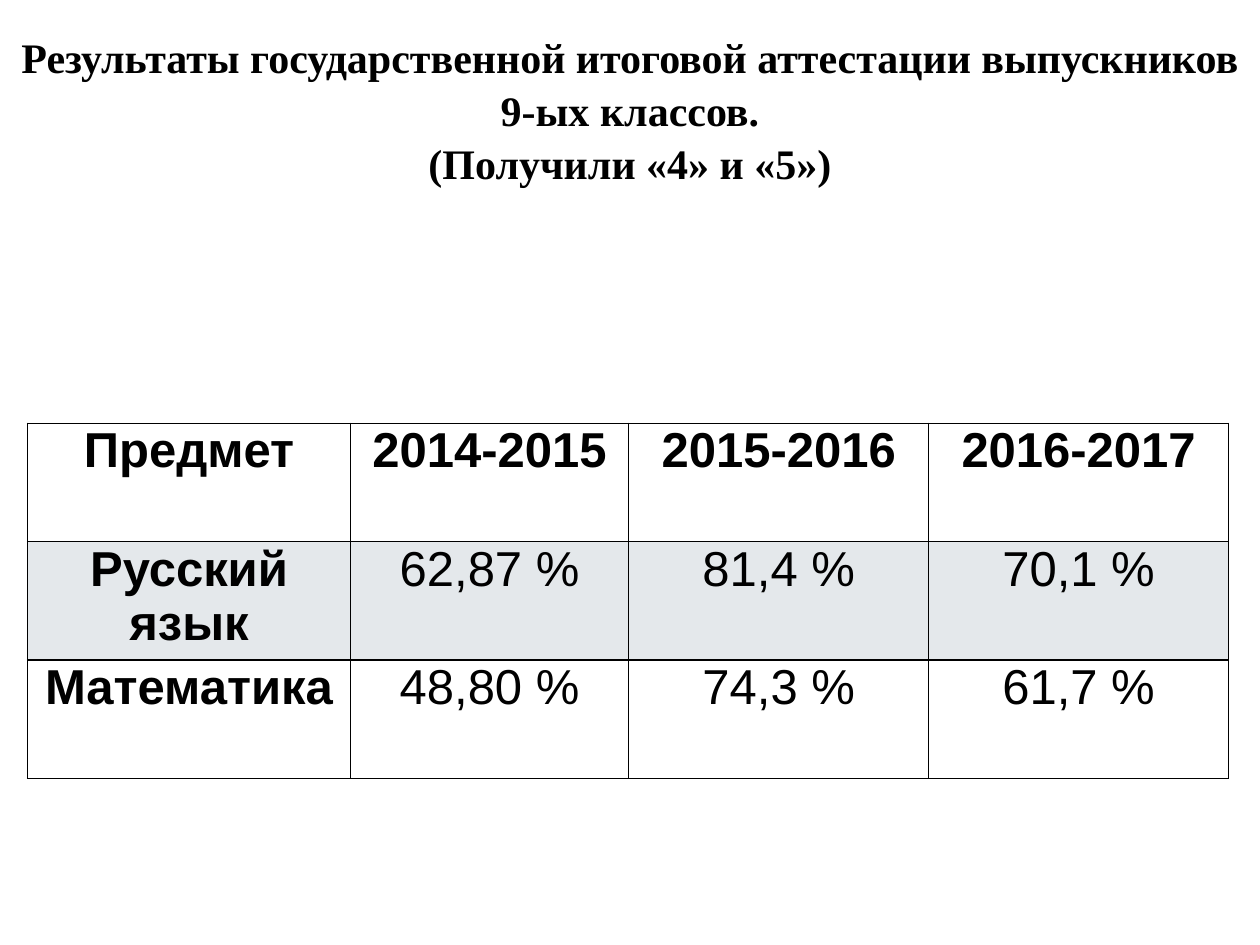
from lxml.etree import SubElement
from pptx import Presentation
from pptx.dml.color import RGBColor
from pptx.enum.text import MSO_ANCHOR as Anchor, PP_ALIGN as Align
from pptx.oxml.ns import qn
from pptx.util import Inches, Pt

BLACK = RGBColor(0x00, 0x00, 0x00)
BAND = RGBColor(0x78, 0x90, 0x9C)
BAND_ALPHA = 20

TITLE = ("Результаты государственной итоговой аттестации выпускников "
         "9-ых классов.\v(Получили «4» и «5»)")
RESULTS = [
    ["Предмет", "2014-2015", "2015-2016", "2016-2017"],
    ["Русский язык", "62,87 %", "81,4 %", "70,1 %"],
    ["Математика", "48,80 %", "74,3 %", "61,7 %"],
]
COLUMN_WIDTHS = [2.56, 2.21, 2.38, 2.38]
ROW_HEIGHT = 0.94


class SlideBuilder:
    title_font, title_size = "Times New Roman", Pt(24)
    table_font, table_size = "Arial", Pt(28)

    def __init__(self, s):
        self.s = s

    def set_text(self, p, text, name, size, bold):
        p.text = text
        p.alignment = Align.CENTER
        p.font.name, p.font.size, p.font.bold = name, size, bold
        p.font.color.rgb = BLACK

    def title(self, text, left, top, width, height):
        sp = self.s.shapes.add_textbox(*map(Inches, (left, top, width, height)))
        tf = sp.text_frame
        tf.word_wrap = True
        tf.vertical_anchor = Anchor.BOTTOM
        tf.margin_bottom = Inches(0.45)
        p = tf.paragraphs[0]
        self.set_text(p, text, self.title_font, self.title_size, True)
        p.line_spacing = 1.05

    def borders(self, cell):
        tcPr = cell._tc.get_or_add_tcPr()
        for side in ("a:lnL", "a:lnR", "a:lnT", "a:lnB"):
            ln = SubElement(tcPr, qn(side), w=str(Pt(1)))
            fill = SubElement(ln, qn("a:solidFill"))
            SubElement(fill, qn("a:srgbClr"), val=str(BLACK))

    def band(self, cell):
        cell.fill.solid()
        cell.fill.fore_color.rgb = BAND
        color = cell._tc.tcPr.find(qn("a:solidFill")).find(qn("a:srgbClr"))
        SubElement(color, qn("a:alpha"), val=str(BAND_ALPHA * 1000))

    def table(self, rows, left, top, widths, row_height):
        size = sum(widths), row_height * len(rows)
        table = self.s.shapes.add_table(
            len(rows), len(widths), *map(Inches, (left, top, *size))).table
        table.first_row = table.horz_banding = False
        for column, width in zip(table.columns, widths):
            column.width = Inches(width)
        for i, row in enumerate(rows):
            table.rows[i].height = Inches(row_height)
            for j, text in enumerate(row):
                cell = table.cell(i, j)
                cell.margin_left = cell.margin_right = Inches(0.07)
                cell.margin_top = cell.margin_bottom = 0
                self.set_text(cell.text_frame.paragraphs[0], text,
                              self.table_font, self.table_size, i == 0 or j == 0)
                self.borders(cell)
                if i % 2:
                    self.band(cell)
                else:
                    cell.fill.background()


def main():
    prs = Presentation()
    prs.slide_width, prs.slide_height = Inches(10), Inches(7.5)
    builder = SlideBuilder(prs.slides.add_slide(prs.slide_layouts[6]))
    builder.title(TITLE, 0, 0.36, 10, 1.58)
    builder.table(RESULTS, 0.22, 3.36, COLUMN_WIDTHS, ROW_HEIGHT)
    prs.save("out.pptx")


if __name__ == "__main__":
    main()
